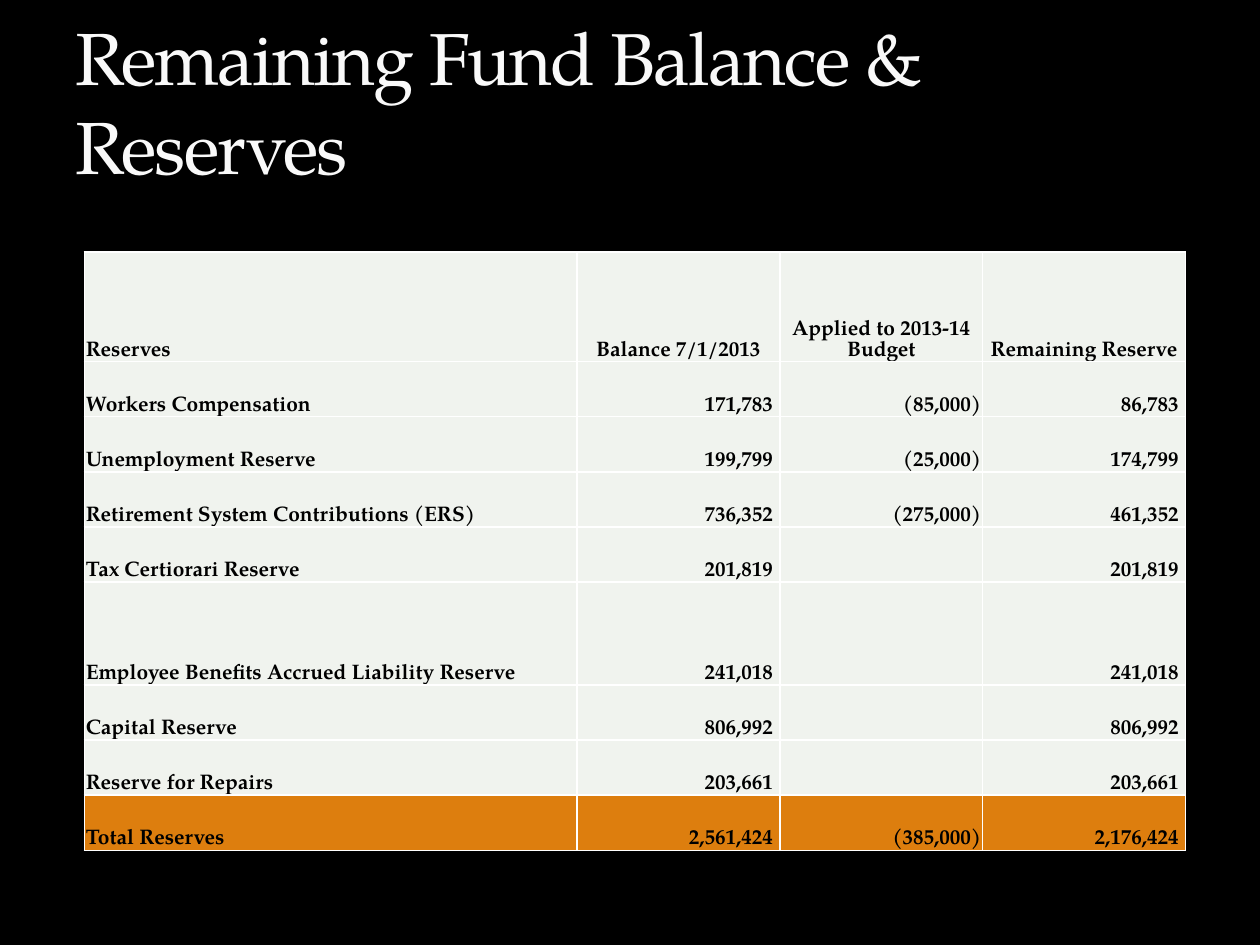
import pptx
import pptx.util
import pptx.dml.color
import pptx.enum.text
import pptx.oxml
from pptx.oxml.ns import nsdecls

Cm, Pt = pptx.util.Cm, pptx.util.Pt
RGB = pptx.dml.color.RGBColor.from_string
ALIGN = pptx.enum.text.PP_ALIGN
BOTTOM = pptx.enum.text.MSO_ANCHOR.BOTTOM
FONT = "TeX Gyre Pagella"
COLORS = {"back": "000000", "title": "F9F9F9", "text": "000000",
          "body": "F0F3EE", "total": "DD7E0E", "line": "FFFFFF"}


def write(frame, text, size, color, lead, bold=False, align=ALIGN.LEFT):
    """Fill a text frame with one run; lead is the line pitch in points."""
    para = frame.paragraphs[0]
    para.alignment = align
    para.line_spacing = Pt(lead)
    run = para.add_run()
    run.text = text
    run.font.name = FONT
    run.font.size = Pt(size)
    run.font.bold = bold
    run.font.color.rgb = RGB(COLORS[color])
    return run


def edge(cell):
    """Draw a thin line on all four sides of a cell."""
    props = cell._tc.get_or_add_tcPr()
    for spot, side in enumerate(("lnL", "lnR", "lnT", "lnB")):
        props.insert(spot, pptx.oxml.parse_xml(
            f'<a:{side} {nsdecls("a")} w="12700"><a:solidFill>'
            f'<a:srgbClr val="{COLORS["line"]}"/></a:solidFill></a:{side}>'))


deck = pptx.Presentation()
deck.slide_width, deck.slide_height = Cm(25.4), Cm(19.05)
slide = deck.slides.add_slide(deck.slide_layouts[6])
slide.background.fill.solid()
slide.background.fill.fore_color.rgb = RGB(COLORS["back"])

# Title
title = slide.shapes.add_textbox(Cm(1.27), Cm(0.43), Cm(22.86), Cm(3.38))
frame = title.text_frame
frame.word_wrap = True
frame.vertical_anchor = BOTTOM
frame.margin_top = frame.margin_bottom = 0
run = write(frame, "Remaining Fund Balance & Reserves", 42, "title", 51)
run.font._element.set("spc", "-100")

# Reserve table
rows = [
    ("Reserves", "Balance 7/1/2013", "Applied to 2013-14 Budget", "Remaining Reserve"),
    ("Workers Compensation", "171,783", "(85,000)", "86,783"),
    ("Unemployment Reserve", "199,799", "(25,000)", "174,799"),
    ("Retirement System Contributions (ERS)", "736,352", "(275,000)", "461,352"),
    ("Tax Certiorari Reserve", "201,819", "", "201,819"),
    ("Employee Benefits Accrued Liability Reserve", "241,018", "", "241,018"),
    ("Capital Reserve", "806,992", "", "806,992"),
    ("Reserve for Repairs", "203,661", "", "203,661"),
    ("Total Reserves", "2,561,424", "(385,000)", "2,176,424"),
]
wide = [9.93, 4.09, 4.09, 4.09]
high = [2.21] + [1.11] * 4 + [2.08] + [1.11] * 3
table = slide.shapes.add_table(len(rows), len(wide), Cm(1.7), Cm(5.08),
                               Cm(sum(wide)), Cm(sum(high))).table
for col, width in zip(table.columns, wide):
    col.width = Cm(width)
for row, height in zip(table.rows, high):
    row.height = Cm(height)

for r, texts in enumerate(rows):
    for c, text in enumerate(texts):
        cell = table.cell(r, c)
        cell.fill.solid()
        cell.fill.fore_color.rgb = RGB(COLORS["total" if r == len(rows) - 1 else "body"])
        edge(cell)
        cell.vertical_anchor = BOTTOM
        cell.margin_left = cell.margin_right = cell.margin_top = Cm(0.03)
        cell.margin_bottom = 0
        align = ALIGN.LEFT
        if c:
            align = ALIGN.RIGHT if r else ALIGN.CENTER
        if r and c in (1, 3):  # keeps digits in line with the bracketed figures
            cell.margin_right = Cm(0.14)
        if text:
            write(cell.text_frame, text, 12, "text", 12, bold=True, align=align)

deck.save("out.pptx")
